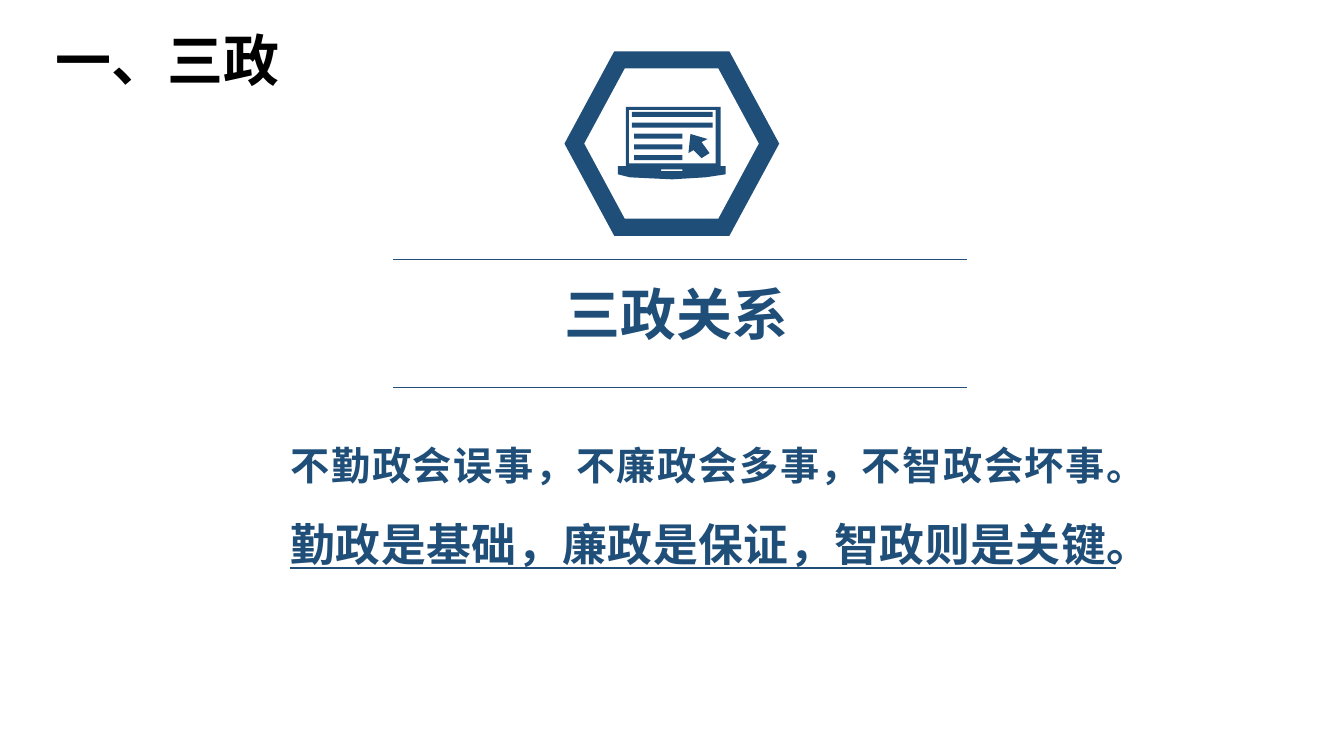
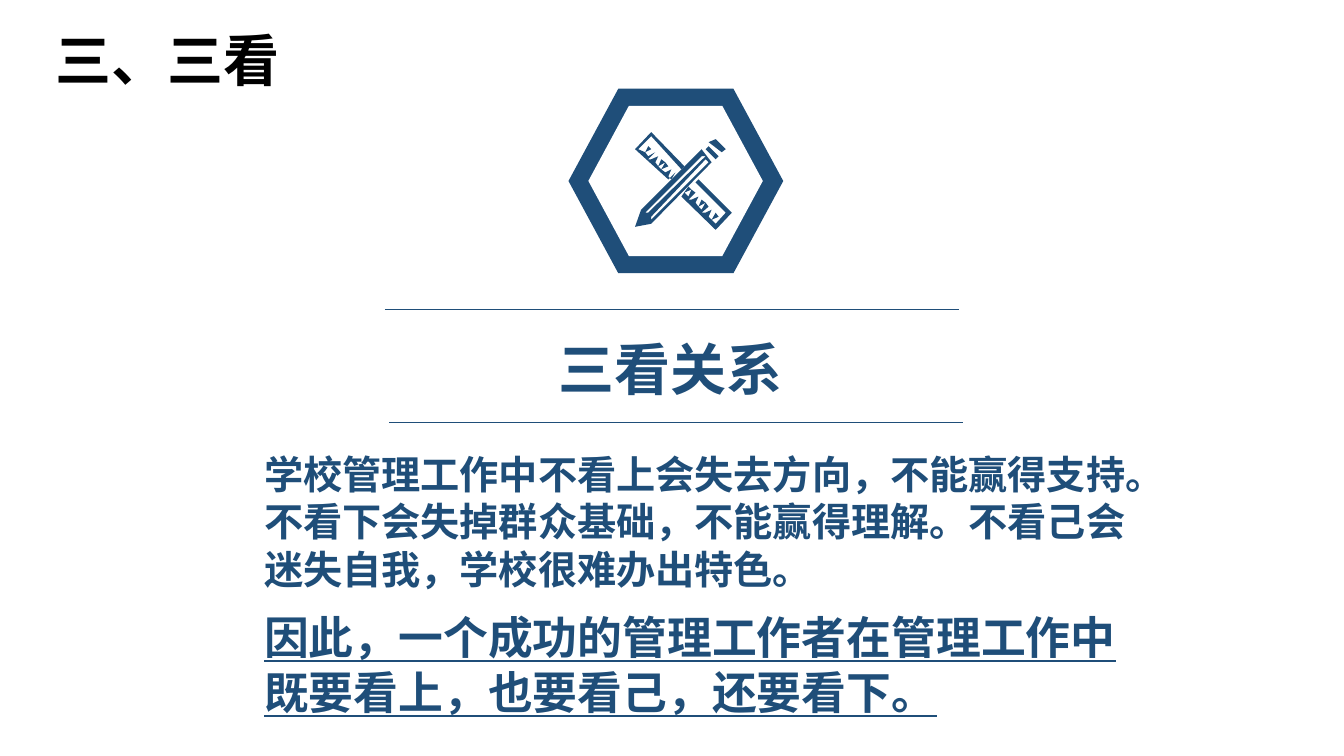
from lxml import etree
from pptx import Presentation
from pptx.dml.color import RGBColor
from pptx.enum.shapes import MSO_CONNECTOR, MSO_SHAPE
from pptx.enum.text import MSO_ANCHOR, MSO_AUTO_SIZE, PP_ALIGN
from pptx.oxml.ns import qn
from pptx.util import Pt

HEXAGON, RECT = MSO_SHAPE.HEXAGON, MSO_SHAPE.RECTANGLE
STRAIGHT = MSO_CONNECTOR.STRAIGHT
LEFT, CENTER, JUSTIFY = PP_ALIGN.LEFT, PP_ALIGN.CENTER, PP_ALIGN.JUSTIFY
TOP, NO_FIT = MSO_ANCHOR.TOP, MSO_AUTO_SIZE.NONE

COLORS = {"navy": "1F4E79", "white": "FFFFFF", "black": "000000"}
FONT = "Noto Sans CJK SC"
LEADING = 1.22
UNIT = 0.72  # points per step of the icon grid

# Icons: each outline is a list of contours, measured from the badge corner.
LAPTOP = [
    [[(155, 55), (61, 55), (61, 114), (155, 114)],
     [(150, 111), (64, 111), (64, 58), (150, 58)]],
    [[(53, 114), (53, 122), (65, 125), (85, 126), (107, 127), (140, 125),
      (160, 122), (160, 114)],
     [(117, 119), (96, 119), (96, 117), (117, 117)]],
    [[(142, 87), (125, 82), (123, 101), (128, 98), (136, 106), (144, 101),
      (136, 90)]],
]
LAPTOP_BARS = [(67, 80), (67, 80), (69, 48), (69, 48), (69, 48)]

RULER_TOP = [
    (106, 83), (102, 90), (99, 87), (102, 80), (96, 83), (92, 80), (99, 77),
    (96, 73), (92, 80), (89, 77), (96, 73), (92, 70), (89, 77), (86, 73),
    (89, 67), (82, 70), (79, 70), (86, 63), (79, 67), (76, 63), (82, 60),
    (79, 57), (76, 63), (69, 60), (82, 47), (112, 80), (115, 77), (82, 43),
    (66, 60), (99, 90)]
RULER_BOTTOM = [
    (129, 90), (126, 93), (156, 123), (146, 134), (142, 130), (149, 127),
    (146, 123), (142, 130), (139, 127), (142, 120), (136, 123), (132, 123),
    (139, 117), (136, 113), (132, 120), (129, 117), (136, 113), (132, 110),
    (129, 117), (126, 113), (129, 107), (122, 110), (119, 110), (126, 103),
    (122, 100), (119, 107), (115, 103), (122, 100), (119, 97), (112, 107),
    (146, 140), (162, 123)]
ERASER = [(146, 50), (139, 53), (152, 63), (156, 60)]
FERRULE = [(136, 60), (146, 70), (149, 67), (139, 57)]
PENCIL = [
    [(72, 120), (66, 137), (82, 134), (142, 73), (132, 60)],
    [(139, 73), (82, 130), (82, 127), (136, 70)],
    [(136, 67), (79, 123), (76, 123), (132, 67)]]
PENCIL_AND_RULER = [[RULER_TOP], [RULER_BOTTOM], [ERASER], [FERRULE], PENCIL]

SLIDES = [
    {"title": "一、三政", "heading": "三政关系", "heading_at": (281.5, 195),
     "badge": (403.2, 36.7), "icon": LAPTOP, "bars": LAPTOP_BARS,
     "rules": [(280.8, 185), (280.8, 276.5)],
     "body_box": (200.2, 294, 597.6, 203.8), "align": JUSTIFY,
     "spacing": 1.5, "gap": 0,
     "body": ["不勤政会误事，不廉政会多事，不智政会坏事。",
              "勤政是基础，廉政是保证，智政则是关键。"]},
    {"title": "三、三看", "heading": "三看关系", "heading_at": (277.2, 234.6),
     "badge": (406.1, 63.4), "icon": PENCIL_AND_RULER, "bars": [],
     "rules": [(275, 221), (277.9, 301.7)],
     "body_box": (181.4, 317.4, 635.8, 200), "align": LEFT,
     "spacing": 1, "gap": 12,
     "body": ["学校管理工作中不看上会失去方向，不能赢得支持。不看下会失掉群众基础，"
              "不能赢得理解。不看己会迷失自我，学校很难办出特色。",
              "因此，一个成功的管理工作者在管理工作中既要看上，也要看己，还要看下。"]},
]


def set_text(sp, box, lines, sizes, color, align, spacing=1, gap=0):
    """Place sp and fill it with bold, unbulleted paragraphs."""
    sp.left, sp.top, sp.width, sp.height = (Pt(v) for v in box)
    tf = sp.text_frame
    tf.text = "\n".join(lines)
    tf.word_wrap, tf.auto_size, tf.vertical_anchor = True, NO_FIT, TOP
    for i, (p, size) in enumerate(zip(tf.paragraphs, sizes)):
        p.alignment = align
        p.line_spacing = Pt(round(size * LEADING * spacing))
        p.space_before, p.space_after = Pt(gap if i else 0), Pt(0)
        pPr = p._p.get_or_add_pPr()
        pPr.set("marL", "0")
        pPr.set("indent", "0")
        etree.SubElement(pPr, qn("a:buNone"))
        font = p.runs[0].font
        font.name, font.size, font.bold = FONT, Pt(size), True
        font.color.rgb = RGBColor.from_string(COLORS[color])
        if i:
            font.underline = True
        latin = font._element.find(qn("a:latin"))
        ea = etree.Element(qn("a:ea"), typeface=FONT)
        latin.addnext(ea)


def paint(sp, color):
    sp.shadow.inherit = False
    sp.fill.solid()
    sp.fill.fore_color.rgb = RGBColor.from_string(COLORS[color])
    sp.line.fill.background()


prs = Presentation()
prs.slide_width, prs.slide_height = Pt(960), Pt(540)

for data in SLIDES:
    s = prs.slides.add_slide(prs.slide_layouts[1])
    set_text(s.shapes.title, (32.4, 13.5, 198, 55.4), [data["title"]], [40],
             "black", LEFT)
    set_text(s.placeholders[1], data["body_box"], data["body"], [28, 32],
             "navy", data["align"], data["spacing"], data["gap"])

    heading = s.shapes.add_textbox(0, 0, 0, 0)
    set_text(heading, (*data["heading_at"], 403.2, 55.4), [data["heading"]],
             [40], "navy", CENTER)

    for x, y in data["rules"]:
        rule = s.shapes.add_connector(STRAIGHT, Pt(x), Pt(y), Pt(x + 409.7), Pt(y))
        rule.line.width = Pt(0.5)
        rule.line.color.rgb = RGBColor.from_string(COLORS["navy"])
        etree.SubElement(rule._element.spPr, qn("a:effectLst"))

    x, y = data["badge"]
    for dx, dy, w, h, color in [(0, 0, 153.4, 131.8, "navy"),
                                (14.2, 12.2, 124.6, 107.3, "white")]:
        sp = s.shapes.add_shape(HEXAGON, Pt(x + dx), Pt(y + dy), Pt(w), Pt(h))
        sp.adjustments[0] = 0.27
        paint(sp, color)

    for contours in data["icon"]:
        fb = s.shapes.build_freeform(*contours[0][0], scale=Pt(UNIT))
        for i, points in enumerate(contours):
            if i:
                fb.move_to(*points[0])
            fb.add_line_segments(points[1:], close=True)
        paint(fb.convert_to_shape(Pt(x), Pt(y)), "navy")

    for i, (left, width) in enumerate(data["bars"]):
        sp = s.shapes.add_shape(RECT, Pt(x + left * UNIT),
                                Pt(y + (60 + 10.75 * i) * UNIT),
                                Pt(width * UNIT), Pt(5 * UNIT))
        paint(sp, "navy")

prs.save("out.pptx")
